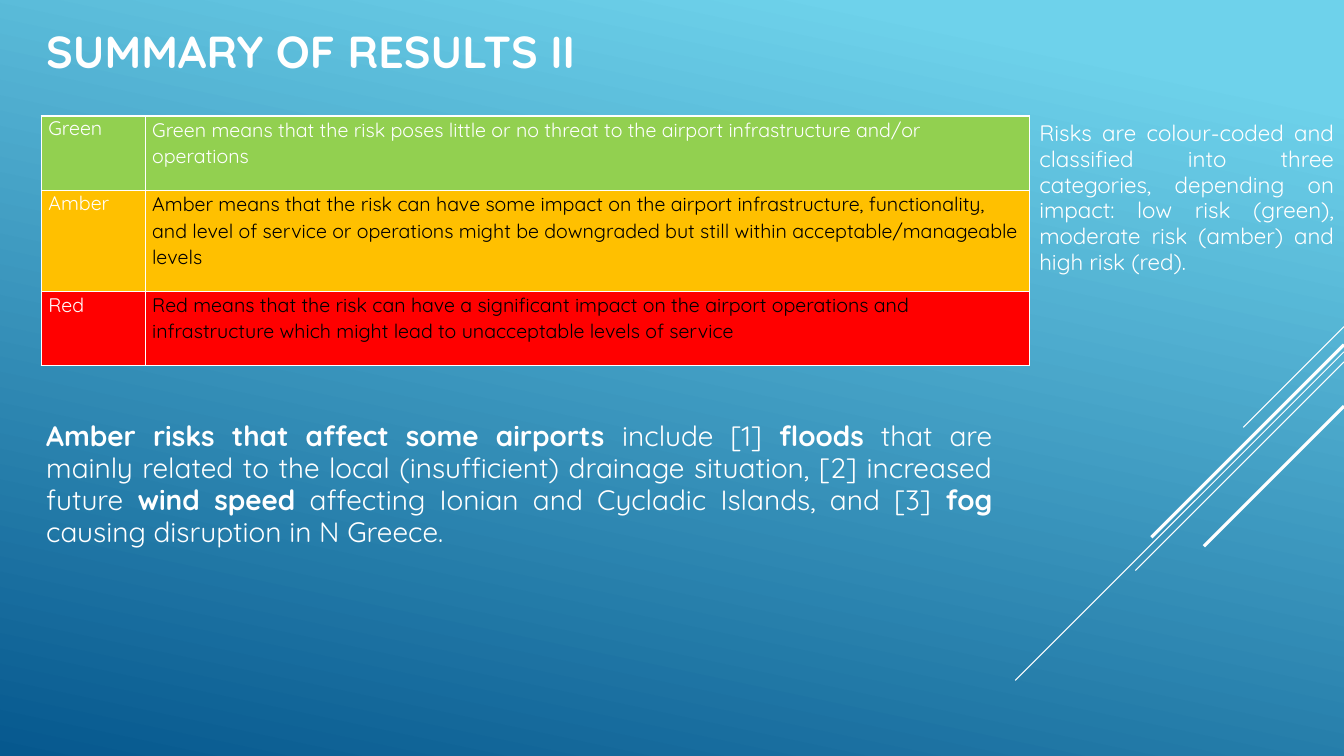
from lxml.etree import SubElement
from pptx import Presentation
from pptx.dml.color import RGBColor
from pptx.enum.shapes import MSO_CONNECTOR as Connector
from pptx.enum.text import MSO_ANCHOR as Anchor, PP_ALIGN as Align
from pptx.oxml.ns import qn
from pptx.util import Inches, Pt

WHITE = RGBColor(0xFF, 0xFF, 0xFF)
BLACK = RGBColor(0x00, 0x00, 0x00)
SKY = RGBColor(0x6E, 0xD2, 0xEB)
OCEAN = RGBColor(0x06, 0x58, 0x8E)
GREEN = RGBColor(0x92, 0xD0, 0x50)
AMBER = RGBColor(0xFF, 0xC0, 0x00)
RED = RGBColor(0xFF, 0x00, 0x00)

SLIDE_WIDTH, SLIDE_HEIGHT = 13.33, 7.5

# Diagonal lines: start height on the right edge, horizontal run, weight
DIAGONALS = [
    (3.24, 1.00, 0.75),
    (3.49, 3.26, 0.75),
    (3.59, 2.07, 0.75),
    (3.42, 1.91, 2.25),
    (4.03, 1.39, 2.25),
]

# Risk levels: label, label line spacing, meaning, fill, meaning colour, row height
RISK_LEVELS = [
    ("Green", 1, "Green means that the risk poses little or no threat to the airport "
     "infrastructure and/or operations", GREEN, WHITE, 0.74),
    ("Amber", 1, "Amber means that the risk can have some impact on the airport "
     "infrastructure, functionality, and level of service or operations might be "
     "downgraded but still within acceptable/manageable levels", AMBER, BLACK, 1.0),
    ("Red", 1.07, "Red means that the risk can have a significant impact on the airport "
     "operations and infrastructure which might lead to unacceptable levels of service",
     RED, BLACK, 0.74),
]

COLOUR_CODE = [
    ("Risks are colour-coded and classified into three categories, depending on "
     "impact: low risk (green), moderate risk (amber) and high risk (red).", False),
]

# Runs of the finding: text, bold
AMBER_FINDING = [
    ("Amber risks that affect some airports ", True),
    ("include [1] ", False),
    ("floods", True),
    (" that are mainly related to the local (insufficient) drainage situation, "
     "[2] increased future ", False),
    ("wind speed", True),
    (" affecting Ionian and Cycladic Islands, and [3] ", False),
    ("fog ", True),
    ("causing disruption in N Greece.", False),
]


class SlideBuilder:
    font_name = "Quicksand"

    def __init__(self, slide):
        self.slide = slide

    def background(self, start, end, angle):
        fill = self.slide.background.fill
        fill.gradient()
        fill.gradient_angle = angle
        for stop, colour, position in zip(fill.gradient_stops, (start, end), (0.1, 1)):
            stop.color.rgb = colour
            stop.position = position

    def line(self, start, end, weight):
        connector = self.slide.shapes.add_connector(
            Connector.STRAIGHT, *map(Inches, start + end))
        connector.line.color.rgb = WHITE
        connector.line.width = Pt(weight)
        SubElement(connector._element.spPr, qn("a:effectLst"))

    def add_runs(self, paragraph, runs, size, colour=WHITE, spacing=1):
        paragraph.line_spacing = spacing
        for text, bold in runs:
            run = paragraph.add_run()
            run.text = text
            run.font.name = self.font_name
            run.font.size = Pt(size)
            run.font.bold = bold
            run.font.color.rgb = colour

    def text(self, box, runs, size, spacing, align=Align.LEFT, anchor=Anchor.TOP):
        text_frame = self.slide.shapes.add_textbox(*map(Inches, box)).text_frame
        text_frame.word_wrap = True
        text_frame.vertical_anchor = anchor
        paragraph = text_frame.paragraphs[0]
        paragraph.alignment = align
        self.add_runs(paragraph, runs, size, spacing=spacing)

    def cell(self, cell, text, fill, colour, spacing):
        cell.fill.solid()
        cell.fill.fore_color.rgb = fill
        cell.margin_left = cell.margin_right = Inches(0.07)
        cell.margin_top = cell.margin_bottom = 0
        self.add_runs(cell.text_frame.paragraphs[0], [(text, False)], 14, colour, spacing)
        # Borders go before the fill in the cell properties
        properties = cell._tc.get_or_add_tcPr()
        for index, side in enumerate(("a:lnL", "a:lnR", "a:lnT", "a:lnB")):
            border = SubElement(properties, qn(side), w=str(Pt(1)))
            solid = SubElement(border, qn("a:solidFill"))
            SubElement(solid, qn("a:srgbClr"), val=str(WHITE))
            properties.insert(index, border)

    def risk_table(self, left, top, widths, levels):
        height = sum(level[-1] for level in levels)
        table = self.slide.shapes.add_table(
            len(levels), len(widths), Inches(left), Inches(top),
            Inches(sum(widths)), Inches(height)).table
        for column, width in zip(table.columns, widths):
            column.width = Inches(width)
        for index, level in enumerate(levels):
            label, label_spacing, meaning, fill, colour, row_height = level
            table.rows[index].height = Inches(row_height)
            self.cell(table.cell(index, 0), label, fill, WHITE, label_spacing)
            self.cell(table.cell(index, 1), meaning, fill, colour, 1.07)


def main():
    presentation = Presentation()
    presentation.slide_width = Inches(SLIDE_WIDTH)
    presentation.slide_height = Inches(SLIDE_HEIGHT)
    builder = SlideBuilder(
        presentation.slides.add_slide(presentation.slide_layouts[6]))

    # Backdrop
    builder.background(SKY, OCEAN, 258)
    for top, run, weight in DIAGONALS:
        builder.line((SLIDE_WIDTH, top), (SLIDE_WIDTH - run, top + run), weight)

    # Title
    builder.text((0.36, 0.17, 7.21, 0.65), [("SUMMARY OF RESULTS II", True)],
                 32, 0.9, anchor=Anchor.BOTTOM)

    # Explanation and finding
    builder.text((10.21, 1.15, 3.12, 2.88), COLOUR_CODE, 16, 0.96, Align.JUSTIFY)
    builder.text((0.36, 4.12, 9.58, 1.87), AMBER_FINDING, 20, 0.96, Align.JUSTIFY)

    # Risk levels
    builder.risk_table(0.41, 1.15, (1.03, 8.77), RISK_LEVELS)

    presentation.save("out.pptx")


if __name__ == "__main__":
    main()
